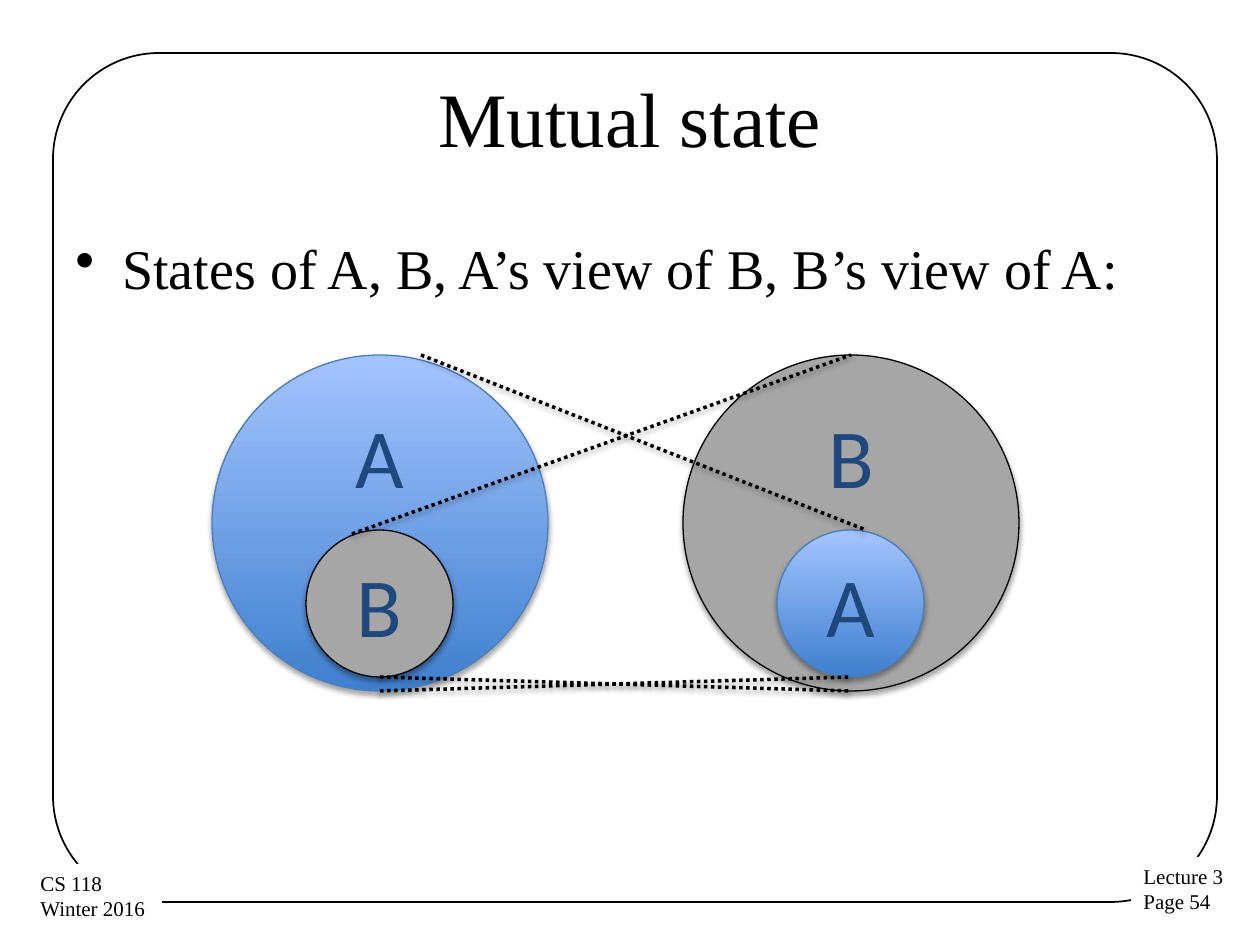
from dataclasses import dataclass

from lxml import etree
from pptx import Presentation
from pptx.dml.color import RGBColor
from pptx.enum.dml import MSO_LINE
from pptx.enum.shapes import MSO_CONNECTOR, MSO_SHAPE
from pptx.enum.text import MSO_ANCHOR, PP_ALIGN
from pptx.oxml import parse_xml
from pptx.oxml.ns import nsdecls, qn
from pptx.util import Emu, Pt

RECT, ROUNDED, OVAL = MSO_SHAPE.RECTANGLE, MSO_SHAPE.ROUNDED_RECTANGLE, MSO_SHAPE.OVAL
STRAIGHT, DOTTED = MSO_CONNECTOR.STRAIGHT, MSO_LINE.ROUND_DOT
MIDDLE, TOP = MSO_ANCHOR.MIDDLE, MSO_ANCHOR.TOP
LEFT, CENTER = PP_ALIGN.LEFT, PP_ALIGN.CENTER
EMU_PER_PX = 914400 / 126


@dataclass(frozen=True)
class Theme:
    black: RGBColor = RGBColor(0, 0, 0)
    white: RGBColor = RGBColor(0xFF, 0xFF, 0xFF)
    gray: RGBColor = RGBColor(0xA6, 0xA6, 0xA6)
    deep_blue: RGBColor = RGBColor(0x3F, 0x80, 0xCE)
    pale_blue: RGBColor = RGBColor(0xA4, 0xC4, 0xFF)
    rim_blue: RGBColor = RGBColor(0x4B, 0x7E, 0xBC)
    letter_blue: RGBColor = RGBColor(0x1F, 0x49, 0x7D)
    serif: str = "Times New Roman"
    sans: str = "Calibri"
    title: int = 44
    body: int = 32
    letter: int = 48
    footer: int = 12


THEME = Theme()


@dataclass(frozen=True)
class State:
    owner: str
    left: int
    top: int
    size: int
    lift: int = 0  # how far the letter sits above the centre


@dataclass(frozen=True)
class Link:
    x1: int
    y1: int
    x2: int
    y2: int


@dataclass(frozen=True)
class FooterLabel:
    lines: tuple[str, ...]
    left: int
    top: int
    width: int
    height: int = 64


def px(length: int) -> Emu:
    return Emu(round(length * EMU_PER_PX))


def box(*lengths: int) -> list[Emu]:
    return [px(length) for length in lengths]


def write(paragraph, text: str, size: int, font: str, color: RGBColor, align=LEFT) -> None:
    paragraph.alignment = align
    run = paragraph.add_run()
    run.text = text
    run.font.size = Pt(size)
    run.font.name = font
    run.font.color.rgb = color


def add_shadow(element, distance: float, opacity: int) -> None:
    element.spPr.append(parse_xml(
        f'<a:effectLst {nsdecls("a")}><a:outerShdw blurRad="{Pt(3.1)}" dist="{Pt(distance)}" '
        f'dir="5400000" rotWithShape="0"><a:srgbClr val="{THEME.black}">'
        f'<a:alpha val="{opacity * 1000}"/></a:srgbClr></a:outerShdw></a:effectLst>'))


def add_frame(slide) -> None:
    frame = slide.shapes.add_shape(ROUNDED, *box(53, 53, 1164, 849))
    frame.adjustments[0] = 0.125
    frame.fill.background()
    frame.line.color.rgb = THEME.black
    frame.line.width = Pt(1)
    frame.shadow.inherit = False


def add_footer(slide, label: FooterLabel) -> None:
    patch = slide.shapes.add_shape(RECT, *box(label.left, label.top, label.width, label.height))
    patch.fill.solid()
    patch.fill.fore_color.rgb = THEME.white
    patch.line.fill.background()
    patch.shadow.inherit = False
    frame = patch.text_frame
    frame.word_wrap = False
    frame.vertical_anchor = TOP
    for index, line in enumerate(label.lines):
        paragraph = frame.add_paragraph() if index else frame.paragraphs[0]
        write(paragraph, line, THEME.footer, THEME.serif, THEME.black)


def add_title(slide, text: str) -> None:
    title = slide.shapes.title
    title.left, title.top, title.width, title.height = box(63, 38, 1134, 158)
    title.text_frame.vertical_anchor = MIDDLE
    write(title.text_frame.paragraphs[0], text, THEME.title, THEME.serif, THEME.black, CENTER)


def add_bullet(slide, text: str) -> None:
    body = slide.shapes.add_textbox(*box(63, 227, 1134, 617))
    body.text_frame.word_wrap = True
    paragraph = body.text_frame.paragraphs[0]
    properties = paragraph._p.get_or_add_pPr()
    properties.set("marL", str(px(47)))
    properties.set("indent", str(px(-47)))
    etree.SubElement(properties, qn("a:buChar")).set("char", "•")
    write(paragraph, text, THEME.body, THEME.serif, THEME.black)


def add_state(slide, state: State) -> None:
    circle = slide.shapes.add_shape(OVAL, *box(state.left, state.top, state.size, state.size))
    if state.owner == "A":
        circle.fill.gradient()
        circle.fill.gradient_angle = 90
        for stop, color in zip(circle.fill.gradient_stops, (THEME.deep_blue, THEME.pale_blue)):
            stop.color.rgb = color
        circle.line.color.rgb = THEME.rim_blue
    else:
        circle.fill.solid()
        circle.fill.fore_color.rgb = THEME.gray
        circle.line.color.rgb = THEME.black
    circle.line.width = Pt(0.75)
    add_shadow(circle._element, 1.8, 35)
    frame = circle.text_frame
    frame.margin_left = frame.margin_right = frame.margin_top = 0
    frame.margin_bottom = px(2 * state.lift)
    frame.vertical_anchor = MIDDLE
    write(frame.paragraphs[0], state.owner, THEME.letter, THEME.sans, THEME.letter_blue, CENTER)


def add_link(slide, link: Link) -> None:
    line = slide.shapes.add_connector(STRAIGHT, *box(link.x1, link.y1, link.x2, link.y2))
    line.line.color.rgb = THEME.black
    line.line.width = Pt(2)
    line.line.dash_style = DOTTED
    add_shadow(line._element, 1.6, 38)


def main() -> None:
    deck = Presentation()
    deck.slide_width, deck.slide_height = box(1260, 945)
    slide = deck.slides.add_slide(deck.slide_layouts[5])

    # Frame and footer labels
    add_frame(slide)
    add_footer(slide, FooterLabel(("Lecture 3", "Page 54"), 1131, 857, 106))
    add_footer(slide, FooterLabel(("CS 118", "Winter 2016"), 28, 864, 134))

    # Heading and bullet
    add_title(slide, "Mutual state")
    add_bullet(slide, "States of A, B, A’s view of B, B’s view of A:")

    # Each party's own state, then its view of the other
    top, own_size, view_size = 355, 336, 147
    view_top = top + 175
    parties = (("A", "B", 212), ("B", "A", 683))
    for owner, _, left in parties:
        add_state(slide, State(owner, left, top, own_size, lift=68))
    for _, peer, left in parties:
        add_state(slide, State(peer, left + (own_size - view_size) // 2, view_top, view_size))

    # Dotted links from each state to the peer's view of it
    a_center, b_center = (left + own_size // 2 for _, _, left in parties)
    own_bottom, view_bottom = top + own_size, view_top + view_size
    for link in (
        Link(a_center + 41, top, b_center + 15, view_top),
        Link(a_center, own_bottom, b_center, view_bottom),
        Link(a_center - 28, view_top + 4, b_center, top),
        Link(a_center, view_bottom, b_center, own_bottom),
    ):
        add_link(slide, link)

    deck.save("out.pptx")


if __name__ == "__main__":
    main()
